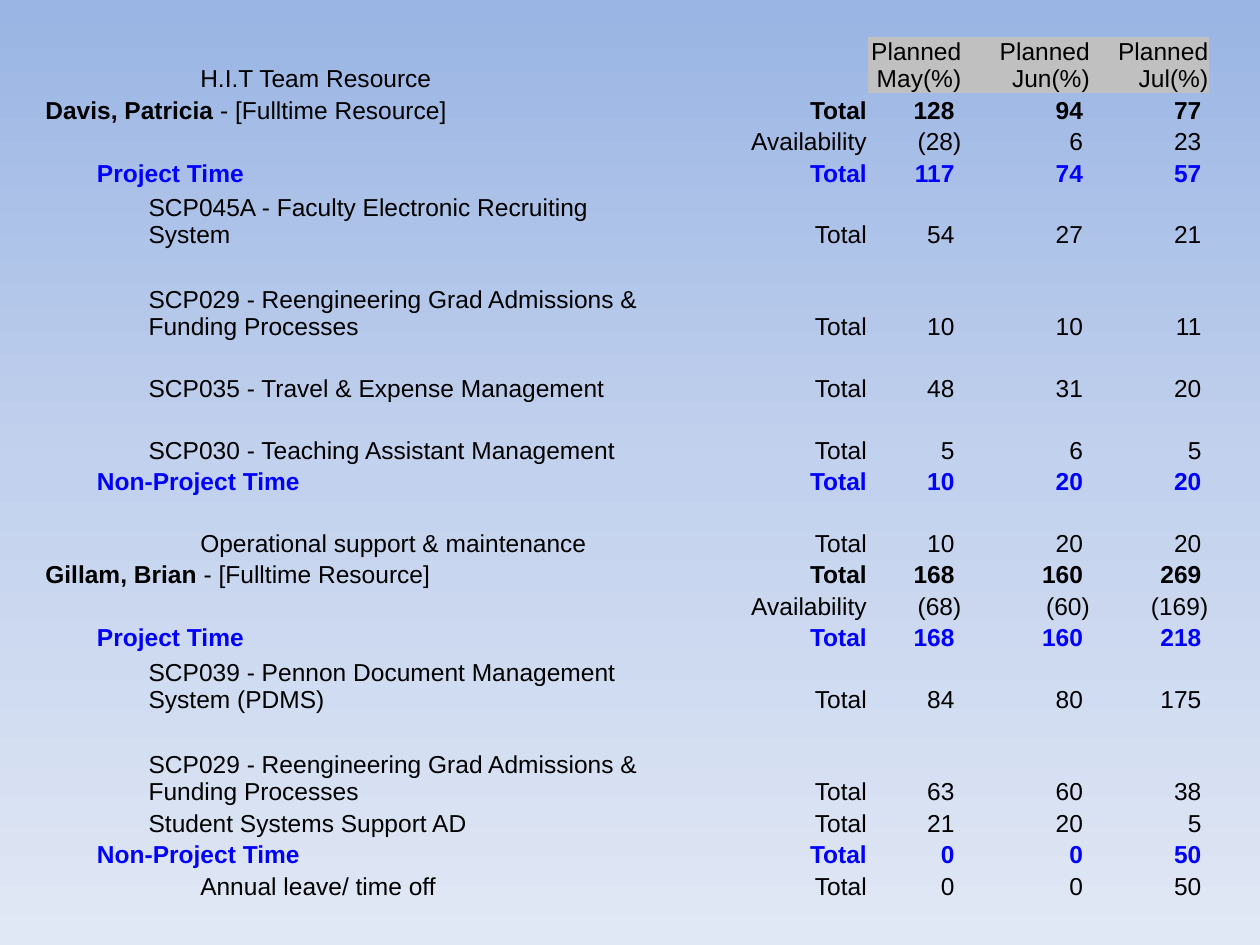
from lxml import etree
from pptx import Presentation
from pptx.dml.color import RGBColor
from pptx.enum.text import MSO_ANCHOR, PP_ALIGN
from pptx.oxml.ns import qn
from pptx.util import Inches, Pt

BOTTOM = MSO_ANCHOR.BOTTOM
LEFT, RIGHT = PP_ALIGN.LEFT, PP_ALIGN.RIGHT

FONT, TEXT_SIZE = "Arial", 14
BLACK, BLUE, GREY = "000000", "0000FF", "C0C0C0"
BACKGROUND_STOPS = [(0, "9AB5E4"), (50, "C2D1ED"), (100, "E1E8F5")]
NO_STYLE_NO_GRID = "{2D5ABB26-0587-4C30-8999-92F81FD0307C}"

COLUMN_WIDTHS = [0.41, 0.41, 0.41, 3.6, 1.71, 0.75, 1.02, 0.94]
MEASURE_COLUMN = 4
HEADER_HEIGHT, SINGLE, DOUBLE, TRIPLE = 0.41, 0.25, 0.49, 0.73
HEADINGS = ["Planned May(%)", "Planned Jun(%)", "Planned Jul(%)"]

# Outline levels; each is also the column where its label starts
PERSON, CATEGORY, PROJECT, ACTIVITY = range(4)
FULLTIME = " - [Fulltime Resource]"

# Row height, level, label, planned percentages
RESOURCE_ROWS = [
    (SINGLE, PERSON, "Davis, Patricia", (128, 94, 77)),
    (SINGLE, None, "", (-28, 6, 23)),
    (SINGLE, CATEGORY, "Project Time", (117, 74, 57)),
    (DOUBLE, PROJECT, "SCP045A - Faculty Electronic Recruiting System", (54, 27, 21)),
    (TRIPLE, PROJECT, "SCP029 - Reengineering Grad Admissions & Funding Processes", (10, 10, 11)),
    (DOUBLE, PROJECT, "SCP035 - Travel & Expense Management", (48, 31, 20)),
    (DOUBLE, PROJECT, "SCP030 - Teaching Assistant Management", (5, 6, 5)),
    (SINGLE, CATEGORY, "Non-Project Time", (10, 20, 20)),
    (DOUBLE, ACTIVITY, "Operational support & maintenance", (10, 20, 20)),
    (SINGLE, PERSON, "Gillam, Brian", (168, 160, 269)),
    (SINGLE, None, "", (-68, -60, -169)),
    (SINGLE, CATEGORY, "Project Time", (168, 160, 218)),
    (DOUBLE, PROJECT, "SCP039 - Pennon Document Management System (PDMS)", (84, 80, 175)),
    (TRIPLE, PROJECT, "SCP029 - Reengineering Grad Admissions & Funding Processes", (63, 60, 38)),
    (SINGLE, PROJECT, "Student Systems Support AD", (21, 20, 5)),
    (SINGLE, CATEGORY, "Non-Project Time", (0, 0, 50)),
    (SINGLE, ACTIVITY, "Annual leave/ time off", (0, 0, 50)),
]


def rgb(hex_color):
    return RGBColor.from_string(hex_color)


def paint_background(slide):
    fill = slide.background.fill
    fill.gradient()
    fill.gradient_angle = 270
    stops = slide.element.find(".//" + qn("a:gsLst"))
    for stop in list(stops):
        stops.remove(stop)
    for percent, color in BACKGROUND_STOPS:
        stop = etree.SubElement(stops, qn("a:gs"), pos=str(percent * 1000))
        etree.SubElement(stop, qn("a:srgbClr"), val=color)


def add_text(cell, text, *, bold=False, color=BLACK, align=LEFT):
    paragraph = cell.text_frame.paragraphs[0]
    paragraph.alignment = align
    run = paragraph.add_run()
    run.text = text
    run.font.name = FONT
    run.font.size = Pt(TEXT_SIZE)
    run.font.bold = bold
    run.font.color.rgb = rgb(color)


def prepare_cell(cell):
    """Clear the fill and size the empty paragraph so it cannot stretch its row."""
    cell.fill.background()
    cell.vertical_anchor = BOTTOM
    cell.margin_left = cell.margin_right = cell.margin_top = Inches(0.01)
    cell.margin_bottom = 0
    paragraph = cell.text_frame.paragraphs[0]
    etree.SubElement(paragraph._p, qn("a:endParaRPr"), sz=str(TEXT_SIZE * 100))


def add_resource_table(slide):
    heights = [HEADER_HEIGHT] + [row[0] for row in RESOURCE_ROWS]
    frame = slide.shapes.add_table(
        len(heights), len(COLUMN_WIDTHS), Inches(0.35), Inches(0.29),
        Inches(sum(COLUMN_WIDTHS)), Inches(sum(heights)))
    table = frame.table
    table.first_row = table.horz_banding = False
    table._tbl.tblPr.find(qn("a:tableStyleId")).text = NO_STYLE_NO_GRID
    for column, width in zip(table.columns, COLUMN_WIDTHS):
        column.width = Inches(width)
    for row, height in zip(table.rows, heights):
        row.height = Inches(height)
    for cell in table.iter_cells():
        prepare_cell(cell)
    return table


def fill_header(table):
    add_text(table.cell(0, ACTIVITY), "H.I.T Team Resource")
    for column, heading in enumerate(HEADINGS, MEASURE_COLUMN + 1):
        cell = table.cell(0, column)
        cell.fill.solid()
        cell.fill.fore_color.rgb = rgb(GREY)
        add_text(cell, heading, align=RIGHT)


def format_percentage(value):
    """Negatives go in brackets; a trailing space keeps the digits aligned."""
    return f"({-value})" if value < 0 else f"{value} "


def fill_resource_row(table, row, level, label, percentages):
    style = {"bold": level in (PERSON, CATEGORY),
             "color": BLUE if level == CATEGORY else BLACK}
    if level is not None:
        label_cell = table.cell(row, level)
        if level < ACTIVITY:
            label_cell.merge(table.cell(row, ACTIVITY))
        add_text(label_cell, label, **style)
        if level == PERSON:
            add_text(label_cell, FULLTIME)

    measure = "Availability" if level is None else "Total"
    figures = [measure] + [format_percentage(value) for value in percentages]
    for column, figure in enumerate(figures, MEASURE_COLUMN):
        add_text(table.cell(row, column), figure, align=RIGHT, **style)


def main():
    presentation = Presentation()
    presentation.slide_width, presentation.slide_height = Inches(10), Inches(7.5)
    slide = presentation.slides.add_slide(presentation.slide_layouts[6])
    paint_background(slide)
    table = add_resource_table(slide)
    fill_header(table)
    for row, (_, level, label, percentages) in enumerate(RESOURCE_ROWS, 1):
        fill_resource_row(table, row, level, label, percentages)
    presentation.save("out.pptx")


if __name__ == "__main__":
    main()
